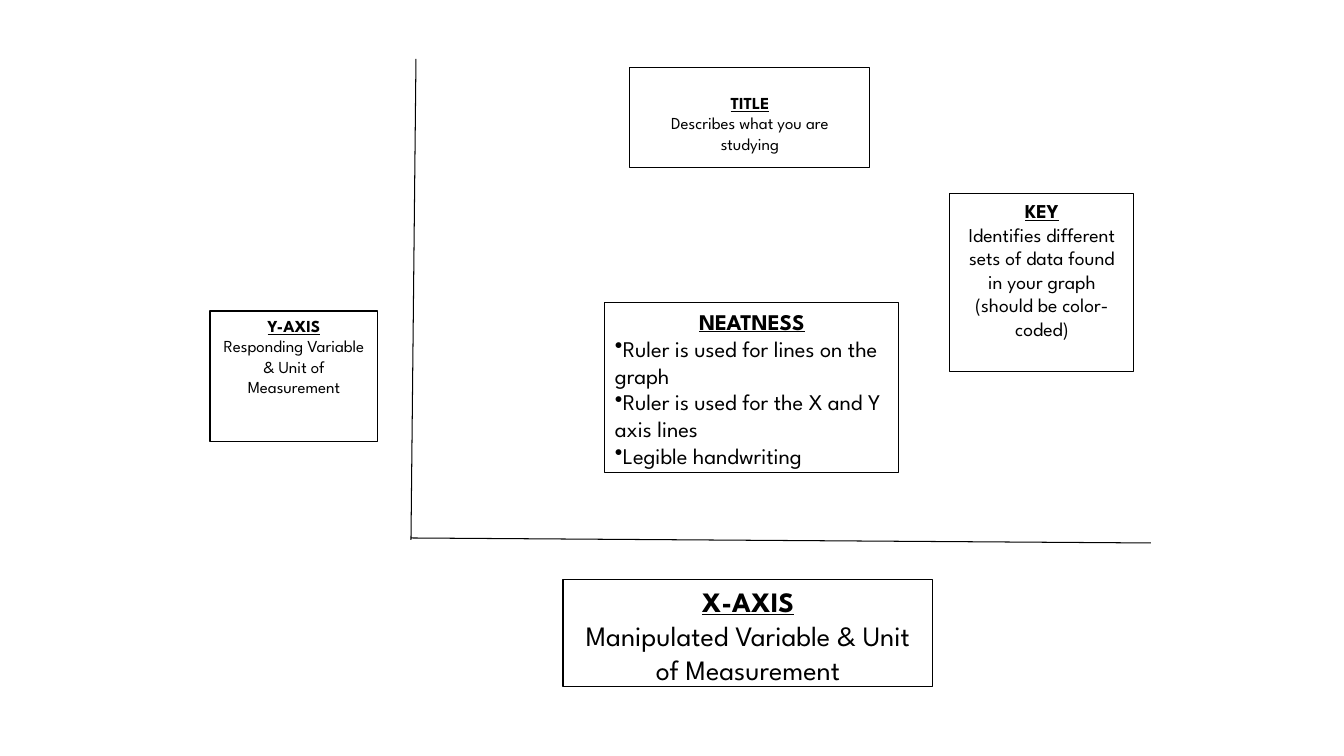
import pptx
import pptx.util
import pptx.dml.color
import pptx.enum.shapes
import pptx.enum.text
from dataclasses import dataclass
from lxml import etree

SIZE = (1344, 756)
AXES = [(416, 59, 411, 540), (411, 538, 1151, 543)]
BOXES = [
    dict(head="TITLE", body=["Describes what you are studying"],
         area=(630, 68, 240, 100), size="small", top=25, side=16),
    dict(head="Y-AXIS", body=["Responding Variable & Unit of Measurement"],
         area=(210, 311, 168, 131), size="small"),
    dict(head="X-AXIS", body=["Manipulated Variable & Unit of Measurement"],
         area=(563, 580, 370, 107), size="huge"),
    dict(head="KEY",
         body=["Identifies different sets of data found in your graph "
               "(should be color-coded)"],
         area=(950, 194, 184, 178), size="mid", side=15),
    dict(head="NEATNESS",
         body=["Ruler is used for lines on the graph",
               "Ruler is used for the X and Y axis lines",
               "Legible handwriting"],
         area=(605, 303, 294, 170), size="large", list=True),
]


@dataclass(frozen=True)
class Theme:
    font: str = "League Spartan"
    ink: str = "000000"
    paper: str = "FFFFFF"
    line: float = 0.75
    small: int = 12
    mid: int = 14
    large: int = 16
    huge: int = 20


THEME = Theme()
SCALE = 914400 / 100.8


def px(n):
    return pptx.util.Emu(round(n * SCALE))


def color(code):
    return pptx.dml.color.RGBColor.from_string(code)


def stroke(line):
    line.color.rgb = color(THEME.ink)
    line.width = pptx.util.Pt(THEME.line)


def write(para, text, size, bold=False, bullet=False):
    align = pptx.enum.text.PP_ALIGN
    para.alignment = align.LEFT if bullet else align.CENTER
    if bullet:
        props = para._p.get_or_add_pPr()
        props.set("marL", "0")
        props.set("indent", "0")
        mark = etree.SubElement(props, pptx.oxml.ns.qn("a:buChar"))
        mark.set("char", "•")
    run = para.add_run()
    run.text = text
    font = run.font
    font.name = THEME.font
    font.size = pptx.util.Pt(size)
    font.bold = font.underline = bold
    font.color.rgb = color(THEME.ink)


def draw_axis(slide, ends):
    kind = pptx.enum.shapes.MSO_CONNECTOR.STRAIGHT
    axis = slide.shapes.add_connector(kind, *map(px, ends))
    stroke(axis.line)
    etree.SubElement(axis._element.spPr, pptx.oxml.ns.qn("a:effectLst"))


def draw_box(slide, box):
    kind = pptx.enum.shapes.MSO_SHAPE.RECTANGLE
    shape = slide.shapes.add_shape(kind, *map(px, box["area"]))
    shape.shadow.inherit = False
    shape.fill.solid()
    shape.fill.fore_color.rgb = color(THEME.paper)
    stroke(shape.line)
    frame = shape.text_frame
    frame.word_wrap = True
    frame.vertical_anchor = pptx.enum.text.MSO_ANCHOR.TOP
    frame.margin_top = px(box.get("top", 5))
    frame.margin_left = frame.margin_right = px(box.get("side", 10))
    size = getattr(THEME, box["size"])
    write(frame.paragraphs[0], box["head"], size, bold=True)
    for text in box["body"]:
        write(frame.add_paragraph(), text, size, bullet=box.get("list", False))


def main():
    deck = pptx.Presentation()
    deck.slide_width, deck.slide_height = map(px, SIZE)
    slide = deck.slides.add_slide(deck.slide_layouts.get_by_name("Blank"))
    for ends in AXES:
        draw_axis(slide, ends)
    for box in BOXES:
        draw_box(slide, box)
    deck.save("out.pptx")


if __name__ == "__main__":
    main()
